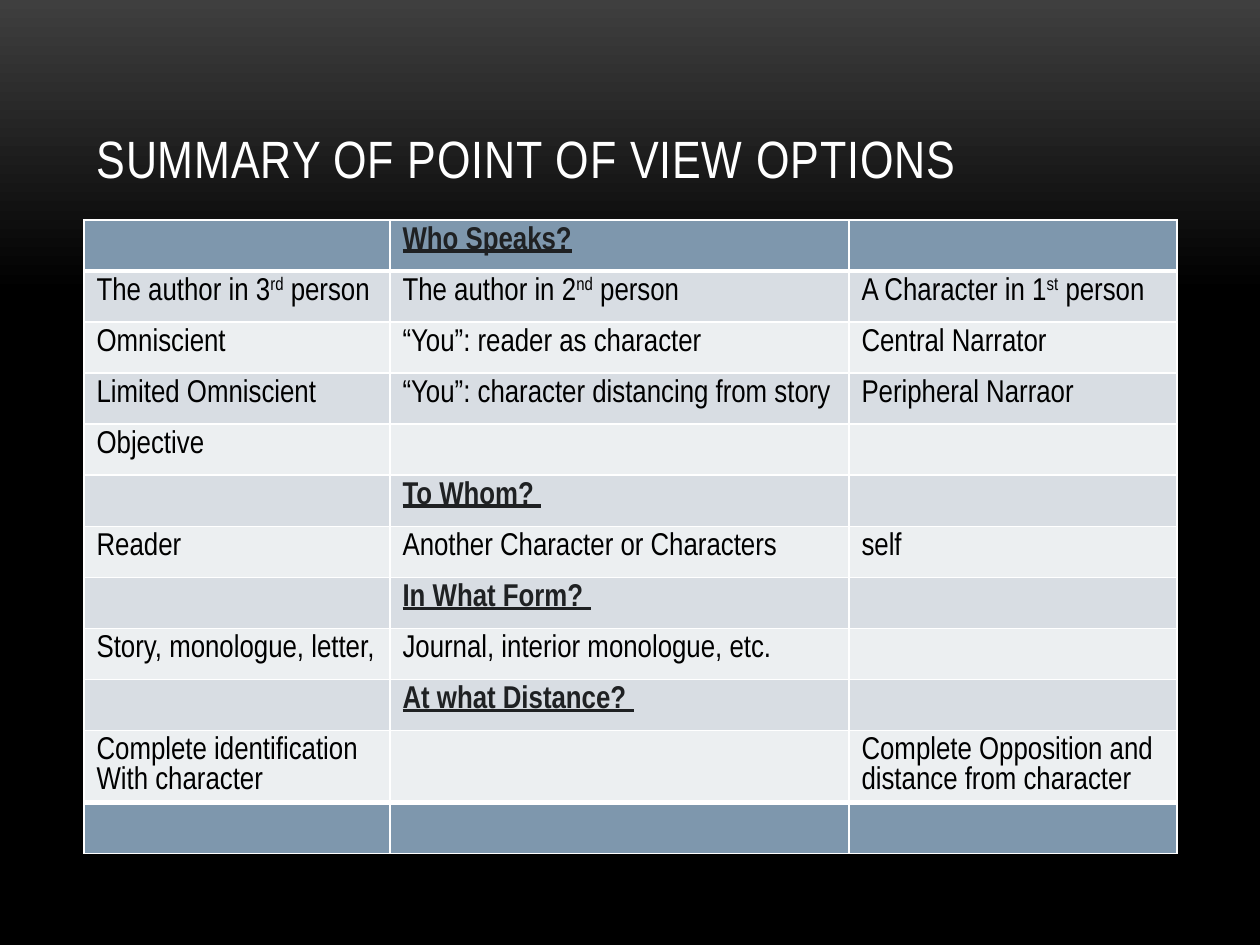
from dataclasses import dataclass

from lxml.etree import SubElement
from pptx import Presentation
from pptx.dml.color import RGBColor
from pptx.enum.text import MSO_ANCHOR as Anchor, PP_ALIGN as Align
from pptx.oxml.ns import qn
from pptx.util import Emu, Pt

EMU_PER_PX = 914400 / 126
FONT = "Arial Narrow"

WHITE = RGBColor(0xFF, 0xFF, 0xFF)
BLACK = RGBColor(0x00, 0x00, 0x00)
CHARCOAL = RGBColor(0x3F, 0x3F, 0x3F)
INK = RGBColor(0x1F, 0x21, 0x23)
STEEL = RGBColor(0x7E, 0x97, 0xAD)
BAND_DARK = RGBColor(0xD8, 0xDD, 0xE3)
BAND_LIGHT = RGBColor(0xEC, 0xEF, 0xF1)


@dataclass(frozen=True)
class Row:
    left: str = ""
    middle: str = ""
    right: str = ""
    is_question: bool = False
    height: int = 51


# A pair of ^ marks encloses a superscript
ROWS = [
    Row(middle="Who Speaks?", is_question=True),
    Row("The author in 3^rd^ person", "The author in 2^nd^ person",
        "A Character in 1^st^ person"),
    Row("Omniscient", "“You”: reader as character", "Central Narrator"),
    Row("Limited Omniscient", "“You”: character distancing from story",
        "Peripheral Narraor"),
    Row("Objective"),
    Row(middle="To Whom? ", is_question=True),
    Row("Reader", "Another Character or Characters", "self"),
    Row(middle="In What Form? ", is_question=True),
    Row("Story, monologue, letter,", "Journal, interior monologue, etc."),
    Row(middle="At what Distance? ", is_question=True),
    Row("Complete identification\nWith character",
        right="Complete Opposition and distance from character", height=71),
    Row(),
]
COLUMN_WIDTHS = [306, 459, 328]


def px(length: int) -> Emu:
    return Emu(round(length * EMU_PER_PX))


def write_text(frame, text: str, *, size: int = 18, color: RGBColor = BLACK,
               bold: bool = False, underline: bool = False,
               spacing: int = 0) -> None:
    for index, line in enumerate(text.split("\n")):
        paragraph = frame.paragraphs[0] if index == 0 else frame.add_paragraph()
        paragraph.alignment = Align.LEFT
        for part_index, part in enumerate(line.split("^")):
            run = paragraph.add_run()
            run.text = part
            font = run.font
            font.name, font.size = FONT, Pt(size)
            font.bold, font.underline = bold, underline
            font.color.rgb = color
            properties = run._r.get_or_add_rPr()
            if part_index % 2:
                properties.set("baseline", "30000")
            if spacing:
                properties.set("spc", str(spacing))


def add_borders(cell, top: int, bottom: int) -> None:
    properties = cell._tc.get_or_add_tcPr()
    for side, points in (("L", 1), ("R", 1), ("T", top), ("B", bottom)):
        border = SubElement(properties, qn(f"a:ln{side}"), w=str(Pt(points)))
        fill = SubElement(border, qn("a:solidFill"))
        SubElement(fill, qn("a:srgbClr"), val=str(WHITE))


def fill_row(table, index: int, row: Row) -> None:
    last = len(ROWS) - 1
    if index in (0, last):
        band = STEEL
    else:
        band = BAND_DARK if index % 2 else BAND_LIGHT
    table.rows[index].height = px(row.height)
    for column, text in enumerate((row.left, row.middle, row.right)):
        cell = table.cell(index, column)
        # Heavy rules sit below the first row and above the last
        add_borders(cell, top=3 if index in (1, last) else 1,
                    bottom=3 if index in (0, last - 1) else 1)
        cell.fill.solid()
        cell.fill.fore_color.rgb = band
        if text:
            write_text(cell.text_frame, text,
                       color=INK if row.is_question else BLACK,
                       bold=row.is_question, underline=row.is_question)


def main() -> None:
    deck = Presentation()
    deck.slide_width, deck.slide_height = px(1260), px(945)
    slide = deck.slides.add_slide(deck.slide_layouts[5])

    # Background fading down to black
    backdrop = slide.background.fill
    backdrop.gradient()
    backdrop.gradient_angle = 270
    for stop, position, color in zip(backdrop.gradient_stops, (0, 0.31),
                                     (CHARCOAL, BLACK)):
        stop.position = position
        stop.color.rgb = color

    # Title
    title = slide.shapes.title
    title.left, title.top = px(84), px(38)
    title.width, title.height = px(1092), px(157)
    title.text_frame.vertical_anchor = Anchor.BOTTOM
    write_text(title.text_frame, "SUMMARY OF POINT OF VIEW OPTIONS",
               size=30, color=WHITE, spacing=50)

    # Table of options
    table = slide.shapes.add_table(
        len(ROWS), len(COLUMN_WIDTHS), px(84), px(220),
        px(sum(COLUMN_WIDTHS)), px(sum(row.height for row in ROWS))).table
    table.first_row = table.horz_banding = False
    for column, width in zip(table.columns, COLUMN_WIDTHS):
        column.width = px(width)
    for index, row in enumerate(ROWS):
        fill_row(table, index, row)

    deck.save("out.pptx")


if __name__ == "__main__":
    main()
